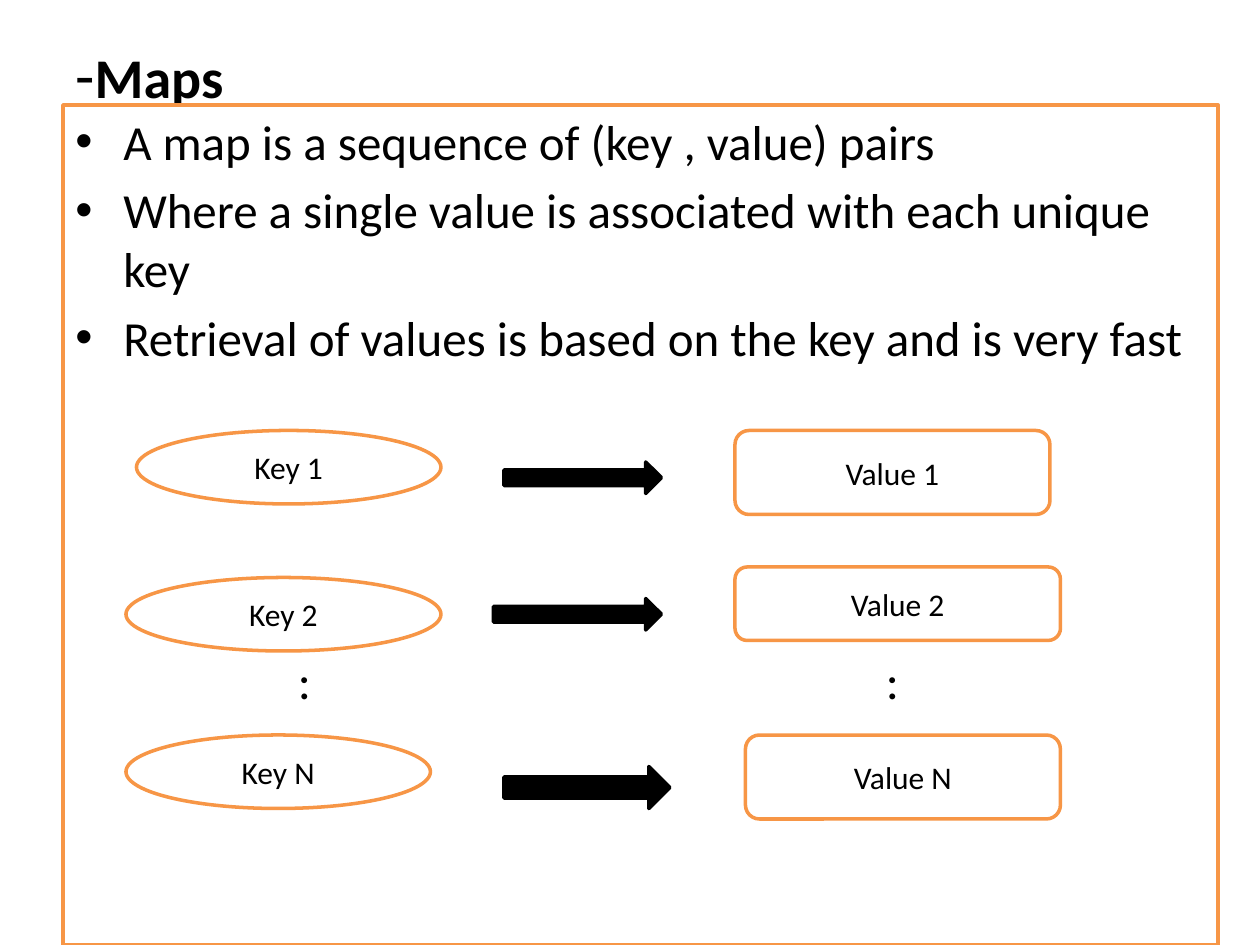
from lxml.etree import SubElement as Sub
from pptx import Presentation
from pptx.dml.color import RGBColor as RGB
from pptx.enum.shapes import MSO_SHAPE as Kind
from pptx.enum.text import MSO_ANCHOR as Anchor, PP_ALIGN as Align
from pptx.oxml.ns import qn
from pptx.util import Inches, Pt

# Content: each box is left, top, width, height in grid cells
TITLE = [("-", {"size": Pt(36)}), ("Maps", {"size": Pt(32), "bold": True})]
POINTS = [
    "A map is a sequence of (key , value) pairs",
    "Where a single value is associated with each unique key",
    "Retrieval of values is based on the key and is very fast",
]
PAIRS = [
    ("Key 1", (13, 41, 29, 7), (48, 44, 15, 3), "Value 1", (70, 41, 30, 8)),
    ("Key 2", (12, 55, 30, 7), (47, 57, 16, 3), "Value 2", (70, 54, 31, 7)),
    ("Key N", (12, 70, 29, 7), (48, 73, 15.8, 4), "Value N", (71, 70, 30, 8)),
]
DOTS = [(27, 62, 4, 6), (83, 62, 4, 6)]
HEX = {"ink": "000000", "paper": "FFFFFF", "edge": "F79646"}
COLS, ROWS = 120, 90

deck = Presentation()
deck.slide_width, deck.slide_height = Inches(10), Inches(7.5)
slide = deck.slides.add_slide(deck.slide_layouts[6])


def color(name):
    return RGB.from_string(HEX[name])


def place(box):
    left, top, wide, high = box
    dx, dy = deck.slide_width / COLS, deck.slide_height / ROWS
    return [round(n) for n in (left * dx, top * dy, wide * dx, high * dy)]


def style(item, values):
    for name, value in values.items():
        setattr(item, name, value)


def write(para, text, **look):
    run = para.add_run()
    run.text = text
    style(run.font, {"name": "Calibri", **look})
    run.font.color.rgb = color("ink")


def draw(kind, box, fill="paper", edge="edge"):
    shape = slide.shapes.add_shape(kind, *place(box))
    shape.shadow.inherit = False
    shape.fill.solid()
    shape.fill.fore_color.rgb = color(fill)
    shape.line.color.rgb = color(edge)
    shape.line.width = Pt(2)
    return shape


def label(kind, box, text):
    frame = draw(kind, box).text_frame
    style(frame, {"word_wrap": True, "vertical_anchor": Anchor.MIDDLE})
    para = frame.paragraphs[0]
    para.alignment = Align.CENTER
    write(para, text, size=Pt(18))


def bullet(para):
    props = para._p.get_or_add_pPr()
    props.set("marL", str(Inches(0.38)))
    props.set("indent", str(-Inches(0.38)))
    Sub(props, qn("a:buFont")).set("typeface", "Arial")
    Sub(props, qn("a:buChar")).set("char", "•")


# Title
frame = slide.shapes.add_textbox(*place((6, 3, 108, 8))).text_frame
style(frame, {"word_wrap": True, "vertical_anchor": Anchor.MIDDLE})
for text, look in TITLE:
    write(frame.paragraphs[0], text, **look)

# Framed bullet list
frame = draw(Kind.RECTANGLE, (6, 10, 110, 80)).text_frame
style(frame, {"word_wrap": True, "vertical_anchor": Anchor.TOP})
for i, text in enumerate(POINTS):
    para = frame.add_paragraph() if i else frame.paragraphs[0]
    para.alignment = Align.LEFT
    if i:
        para.space_before = Pt(5.6)
    bullet(para)
    write(para, text, size=Pt(28))

# Key to value rows
for key, oval, arrow, value, card in PAIRS:
    label(Kind.OVAL, oval, key)
    draw(Kind.RIGHT_ARROW, arrow, "ink", "ink")
    label(Kind.ROUNDED_RECTANGLE, card, value)

# Dots for the rows between
for box in DOTS:
    frame = slide.shapes.add_textbox(*place(box)).text_frame
    style(frame, {"word_wrap": True, "margin_top": 0, "margin_bottom": 0})
    frame.paragraphs[0].alignment = Align.CENTER
    write(frame.paragraphs[0], ":", size=Pt(28))

deck.save("out.pptx")
